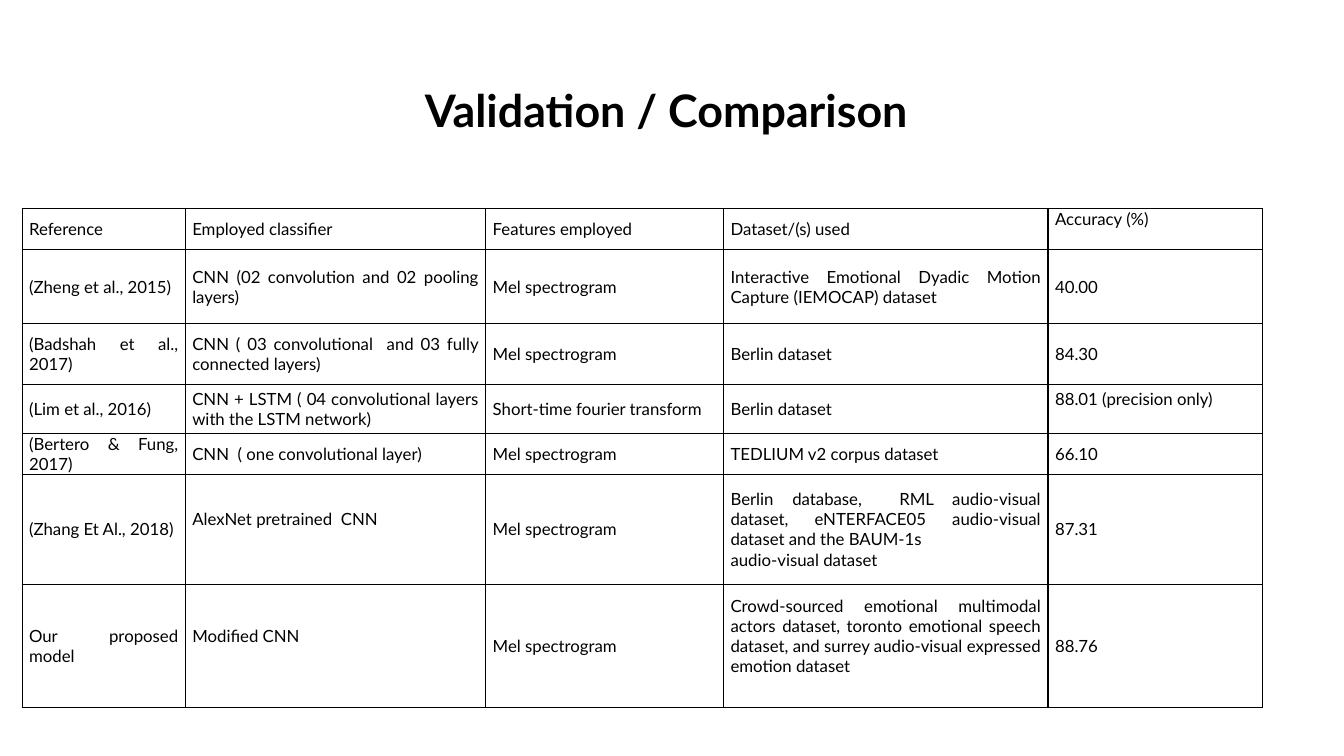
from lxml.etree import SubElement
from pptx import Presentation
from pptx.dml.color import RGBColor
from pptx.enum.text import MSO_ANCHOR, MSO_AUTO_SIZE, PP_ALIGN
from pptx.oxml.ns import qn
from pptx.util import Pt

COLORS = {"ink": "000000", "paper": "FFFFFF"}
LINE = 14.4  # height of one line of table text

COLUMNS = [116.6, 214.6, 169.9, 231.8, 153.4]
ROWS = [29.3, 52.5, 43.6, 35, 29.3, 78.6, 87.8]
STUDIES = [
    ["Reference ", "Employed classifier ", "Features employed ",
     "Dataset/(s) used ", "Accuracy (%)"],
    ["(Zheng et al., 2015)", "CNN (02 convolution and 02 pooling layers)",
     "Mel spectrogram",
     "Interactive Emotional Dyadic Motion Capture (IEMOCAP) dataset", "40.00"],
    ["(Badshah et al., 2017)",
     "CNN ( 03 convolutional  and 03 fully connected layers)",
     "Mel spectrogram", "Berlin dataset", "84.30"],
    ["(Lim et al., 2016)",
     "CNN + LSTM ( 04 convolutional layers with the LSTM network)",
     "Short-time fourier transform ", "Berlin dataset", "88.01 (precision only)"],
    ["(Bertero & Fung, 2017)", "CNN  ( one convolutional layer)",
     "Mel spectrogram", "TEDLIUM v2 corpus dataset", "66.10"],
    ["(Zhang Et Al., 2018)", "AlexNet pretrained  CNN ", "Mel spectrogram ",
     "Berlin database,  RML audio-visual dataset, eNTERFACE05 audio-visual "
     "dataset and the BAUM-1s\naudio-visual dataset", "87.31"],
    ["Our proposed model ", "Modified CNN", "Mel spectrogram",
     "Crowd-sourced emotional multimodal actors dataset, toronto emotional "
     "speech dataset, and surrey audio-visual expressed emotion dataset ",
     "88.76"],
]
# Cells (row, column) whose text sits half a line above the middle
RAISED = {(0, 4), (3, 4), (5, 1), (6, 1), (6, 3)}


class Deck:
    """Holds the style and the current slide."""

    font = "Lato"

    def __init__(self, prs):
        self.slide = prs.slides.add_slide(prs.slide_layouts[5])

    def text(self, tf, text, para, size, bold=False):
        tf.text = text
        font = {"name": self.font, "size": Pt(size), "bold": bold}
        for p in tf.paragraphs:
            for name, value in para.items():
                setattr(p, name, value)
            for r in p.runs:
                for name, value in font.items():
                    setattr(r.font, name, value)
                r.font.color.rgb = RGBColor.from_string(COLORS["ink"])

    def title(self, text, left, top, width, height):
        sp = self.slide.shapes.title
        box = {"left": left, "top": top, "width": width, "height": height}
        for name, value in box.items():
            setattr(sp, name, Pt(value))
        tf = sp.text_frame
        tf.auto_size = MSO_AUTO_SIZE.NONE
        tf.vertical_anchor = MSO_ANCHOR.MIDDLE
        self.text(tf, text, {"alignment": PP_ALIGN.CENTER, "line_spacing": 0.9},
                  32, bold=True)

    def border(self, cell):
        tcPr = cell._tc.get_or_add_tcPr()
        for i, side in enumerate(("lnL", "lnR", "lnT", "lnB")):
            ln = SubElement(tcPr, qn(f"a:{side}"), w=str(Pt(1)))
            fill = SubElement(ln, qn("a:solidFill"))
            SubElement(fill, qn("a:srgbClr"), val=COLORS["ink"])
            tcPr.insert(i, ln)

    def table(self, data, left, top, widths, heights, raised):
        table = self.slide.shapes.add_table(
            len(heights), len(widths), Pt(left), Pt(top),
            Pt(sum(widths)), Pt(sum(heights))).table
        table.first_row = table.horz_banding = False
        for column, width in zip(table.columns, widths):
            column.width = Pt(width)
        for i, (row, height) in enumerate(zip(table.rows, heights)):
            row.height = Pt(height)
            for j, cell in enumerate(row.cells):
                layout = {
                    "margin_left": Pt(5), "margin_right": Pt(5),
                    "margin_top": 0,
                    "margin_bottom": Pt(LINE if (i, j) in raised else 0),
                    "vertical_anchor": MSO_ANCHOR.MIDDLE,
                }
                for name, value in layout.items():
                    setattr(cell, name, value)
                cell.fill.solid()
                cell.fill.fore_color.rgb = RGBColor.from_string(COLORS["paper"])
                self.border(cell)
                self.text(cell.text_frame, data[i][j],
                          {"alignment": PP_ALIGN.JUSTIFY}, 12)


def main():
    prs = Presentation()
    prs.slide_width, prs.slide_height = Pt(960), Pt(540)
    deck = Deck(prs)
    # Heading
    deck.title("Validation / Comparison ", 66, 28.8, 828, 104.4)
    # Comparison of studies
    deck.table(STUDIES, 15.8, 149.2, COLUMNS, ROWS, RAISED)
    prs.save("out.pptx")


if __name__ == "__main__":
    main()
